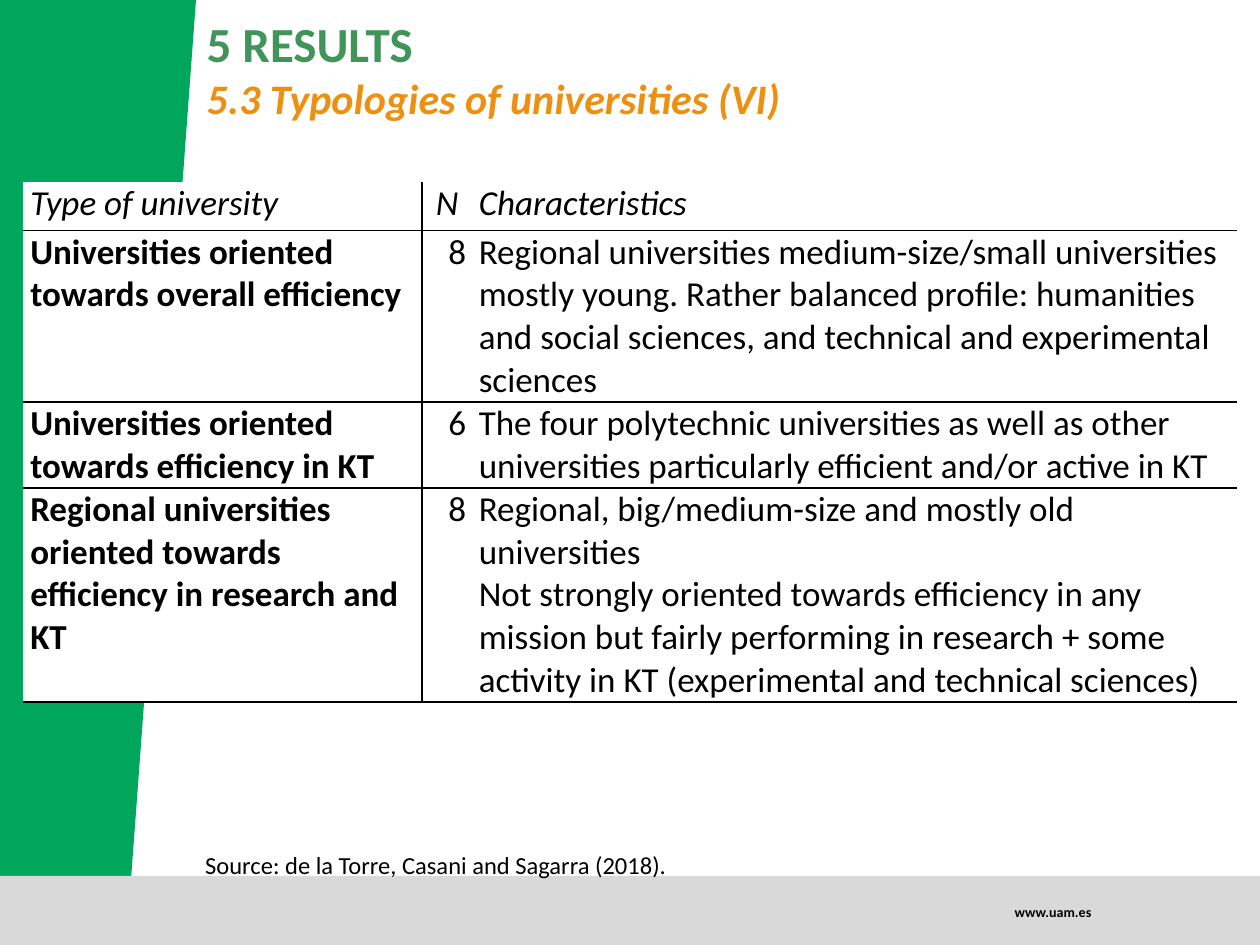
import pptx
import pptx.util
import pptx.dml.color
import pptx.enum.shapes
import pptx.enum.text
import pptx.oxml
import pptx.oxml.ns

Pt = pptx.util.Pt
ALIGN = pptx.enum.text.PP_ALIGN
ANCHOR = pptx.enum.text.MSO_ANCHOR
COLORS = {"green": "00A65C", "grey": "D9D9D9", "black": "000000", "white": "FFFFFF",
          "heading": "42955A", "subheading": "ED8F11"}


def color(name):
    return pptx.dml.color.RGBColor.from_string(COLORS[name])


def write(frame, lines, anchor=ANCHOR.TOP, align=ALIGN.LEFT):
    """Fill a text frame with (text, colour, font format) lines."""
    frame.word_wrap = True
    frame.vertical_anchor = anchor
    for index, (text, color_name, look) in enumerate(lines):
        para = frame.paragraphs[0] if index == 0 else frame.add_paragraph()
        para.alignment = align
        span = para.add_run()
        span.text = text
        span.font.name = "Calibri"
        span.font.color.rgb = color(color_name)
        for key, value in look.items():
            setattr(span.font, key, value)


deck = pptx.Presentation()
deck.slide_width, deck.slide_height = Pt(720), Pt(540)
page = deck.slides.add_slide(deck.slide_layouts[5])

# Green side band and grey footer bar
builder = page.shapes.build_freeform(0, 0, scale=Pt(1))
builder.add_line_segments([(111.6, 0), (74.9, 501), (0, 501)], close=True)
band = builder.convert_to_shape()
footer = page.shapes.add_shape(pptx.enum.shapes.MSO_SHAPE.RECTANGLE,
                               Pt(0), Pt(500.6), Pt(720), Pt(39.4))
for shape, name in ((band, "green"), (footer, "grey")):
    shape.shadow.inherit = False
    shape.fill.solid()
    shape.fill.fore_color.rgb = color(name)
    shape.line.fill.background()

# Title and subtitle
title = page.shapes.title
title.left, title.top, title.width, title.height = Pt(110.9), Pt(4.3), Pt(609.1), Pt(70.6)
title.text_frame.auto_size = pptx.enum.text.MSO_AUTO_SIZE.NONE
write(title.text_frame, [
    ("5 RESULTS", "heading", {"size": Pt(28), "bold": True}),
    ("5.3 Typologies of universities (VI)", "subheading",
     {"size": Pt(24), "bold": True, "italic": True}),
])

# Table of university types
rows = [
    ("Type of university", "N", ["Characteristics"]),
    ("Universities oriented towards overall efficiency", "8",
     ["Regional universities medium-size/small universities mostly young. Rather balanced "
      "profile: humanities and social sciences, and technical and experimental sciences"]),
    ("Universities oriented towards efficiency in KT", "6",
     ["The four polytechnic universities as well as other universities particularly "
      "efficient and/or active in KT"]),
    ("Regional universities oriented towards efficiency in research and KT", "8",
     ["Regional, big/medium-size and mostly old universities",
      "Not strongly oriented towards efficiency in any mission but fairly performing in "
      "research + some activity in KT (experimental and technical sciences)"]),
]
widths = [227.5, 28.8, 436.3]
heights = [27.6, 96, 48, 120]
table = page.shapes.add_table(len(rows), len(widths), Pt(13.7), Pt(104.2),
                              Pt(sum(widths)), Pt(sum(heights))).table
table.first_row = table.horz_banding = False
for column, width in zip(table.columns, widths):
    column.width = Pt(width)

for r, (kind, count, details) in enumerate(rows):
    table.rows[r].height = Pt(heights[r])
    for c, texts in enumerate(([kind], [count], details)):
        cell = table.cell(r, c)
        cell.margin_left = cell.margin_right = Pt(3.6)
        cell.margin_top = cell.margin_bottom = 0
        # Rules below each row and right of the first column
        edges = {"lnL": c == 1, "lnR": c == 0, "lnT": r > 0, "lnB": True}
        for tag, shown in edges.items():
            if shown:
                cell._tc.get_or_add_tcPr().append(pptx.oxml.parse_xml(
                    f'<a:{tag} {pptx.oxml.ns.nsdecls("a")} w="12700"><a:solidFill>'
                    f'<a:srgbClr val="{COLORS["black"]}"/></a:solidFill></a:{tag}>'))
        cell.fill.solid()
        cell.fill.fore_color.rgb = color("white")
        look = {"size": Pt(20), "italic": r == 0, "bold": r > 0 and c == 0}
        align = ALIGN.LEFT if c != 1 else ALIGN.CENTER if r == 0 else ALIGN.RIGHT
        write(cell.text_frame, [(text, "black", look) for text in texts], align=align)

# Source note and web address
notes = [
    ((110.2, 482.4, 499, 24.5), "Source: de la Torre, Casani and Sagarra (2018).",
     {"size": Pt(14)}, ANCHOR.TOP, ALIGN.LEFT),
    ((542.2, 512.6, 88.6, 17.3), "www.uam.es",
     {"size": Pt(8), "bold": True}, ANCHOR.MIDDLE, ALIGN.RIGHT),
]
for place, text, look, anchor, align in notes:
    box = page.shapes.add_textbox(*map(Pt, place))
    write(box.text_frame, [(text, "black", look)], anchor, align)

deck.save("out.pptx")
